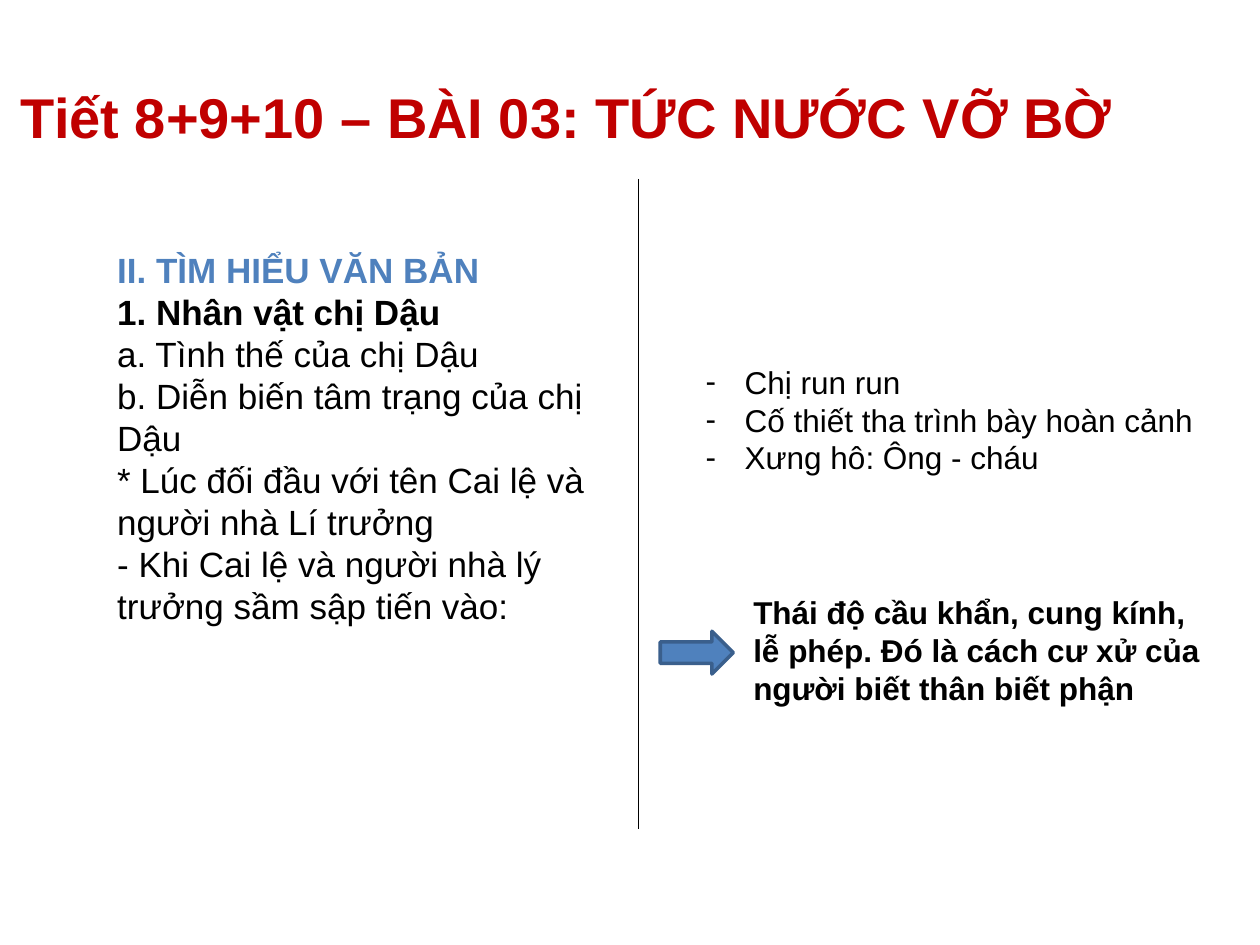
"""Build the lesson slide on the character chị Dậu."""
from lxml.etree import SubElement
from pptx import Presentation
from pptx.dml.color import RGBColor
from pptx.enum.shapes import MSO_CONNECTOR, MSO_SHAPE
from pptx.enum.text import MSO_ANCHOR, MSO_AUTO_SIZE, PP_ALIGN
from pptx.oxml.ns import qn
from pptx.util import Inches, Pt

RED = RGBColor(0xC0, 0x00, 0x00)
BLUE = RGBColor(0x4F, 0x81, 0xBD)
DARK_BLUE = RGBColor(0x3A, 0x5F, 0x8C)
BLACK = RGBColor(0x00, 0x00, 0x00)

TITLE = [("Tiết 8+9+10 – BÀI 03: TỨC NƯỚC VỠ BỜ", RED, True)]
OUTLINE = [
    ("II. TÌM HIỂU VĂN BẢN", BLUE, True),
    ("1. Nhân vật chị Dậu", BLACK, True),
    ("a. Tình thế của chị Dậu", BLACK, False),
    ("b. Diễn biến tâm trạng của chị Dậu", BLACK, False),
    ("* Lúc đối đầu với tên Cai lệ và người nhà Lí trưởng", BLACK, False),
    ("- Khi Cai lệ và người nhà lý", BLACK, False),
    ("trưởng sầm sập tiến vào:", BLACK, False),
]
BEHAVIOUR = [
    ("Chị run run", BLACK, False),
    ("Cố thiết tha trình bày hoàn cảnh", BLACK, False),
    ("Xưng hô: Ông - cháu", BLACK, False),
]
CONCLUSION = [
    ("Thái độ cầu khẩn, cung kính,", BLACK, True),
    ("lễ phép. Đó là cách cư xử của", BLACK, True),
    ("người biết thân biết phận", BLACK, True),
]


def write(box, lines, at, size, bullet=None, align=PP_ALIGN.LEFT, anchor=MSO_ANCHOR.TOP):
    """Place a box and fill it with (text, colour, bold) paragraphs."""
    box.left, box.top, box.width, box.height = map(Inches, at)
    frame = box.text_frame
    frame.word_wrap = True
    frame.auto_size = MSO_AUTO_SIZE.NONE
    frame.vertical_anchor = anchor
    frame.text = "\n".join(text for text, _, _ in lines)
    for paragraph, (_, colour, bold) in zip(frame.paragraphs, lines):
        paragraph.alignment = align
        paragraph.space_before = Pt(0)
        props = paragraph._p.get_or_add_pPr()
        indent = Inches(0.31) if bullet else 0
        props.set("marL", str(indent))
        props.set("indent", str(-indent))
        if bullet:
            SubElement(props, qn("a:buFont"), typeface="Arial")
            SubElement(props, qn("a:buChar"), char=bullet)
        else:
            SubElement(props, qn("a:buNone"))
        font = paragraph.runs[0].font
        font.name, font.size, font.bold = "Arial", Pt(size), bold
        font.color.rgb = colour


def main():
    deck = Presentation()
    deck.slide_width, deck.slide_height = Inches(10), Inches(7.5)
    slide = deck.slides.add_slide(deck.slide_layouts.get_by_name("Two Content"))
    shapes = slide.shapes
    title, outline, behaviour = list(slide.placeholders)[:3]

    write(title, TITLE, (0, 0.3, 9, 1.25), 32, align=PP_ALIGN.CENTER, anchor=MSO_ANCHOR.MIDDLE)
    write(outline, OUTLINE, (0.83, 1.92, 4.24, 3.13), 20)
    write(behaviour, BEHAVIOUR, (5.5, 2.83, 4.11, 1.31), 18, bullet="-")

    divider = shapes.add_connector(
        MSO_CONNECTOR.STRAIGHT, Inches(5.07), Inches(1.42), Inches(5.07), Inches(6.58))
    divider.line.color.rgb = BLACK
    divider.line.width = Pt(0.75)
    SubElement(divider._element.spPr, qn("a:effectLst"))

    arrow = shapes.add_shape(
        MSO_SHAPE.RIGHT_ARROW, Inches(5.24), Inches(5.01), Inches(0.58), Inches(0.34))
    arrow.shadow.inherit = False
    arrow.fill.solid()
    arrow.fill.fore_color.rgb = BLUE
    arrow.line.color.rgb = DARK_BLUE
    arrow.line.width = Pt(2)

    conclusion = shapes.add_textbox(0, 0, 0, 0)
    write(conclusion, CONCLUSION, (5.88, 4.66, 3.85, 1.01), 18)
    deck.save("out.pptx")


if __name__ == "__main__":
    main()
